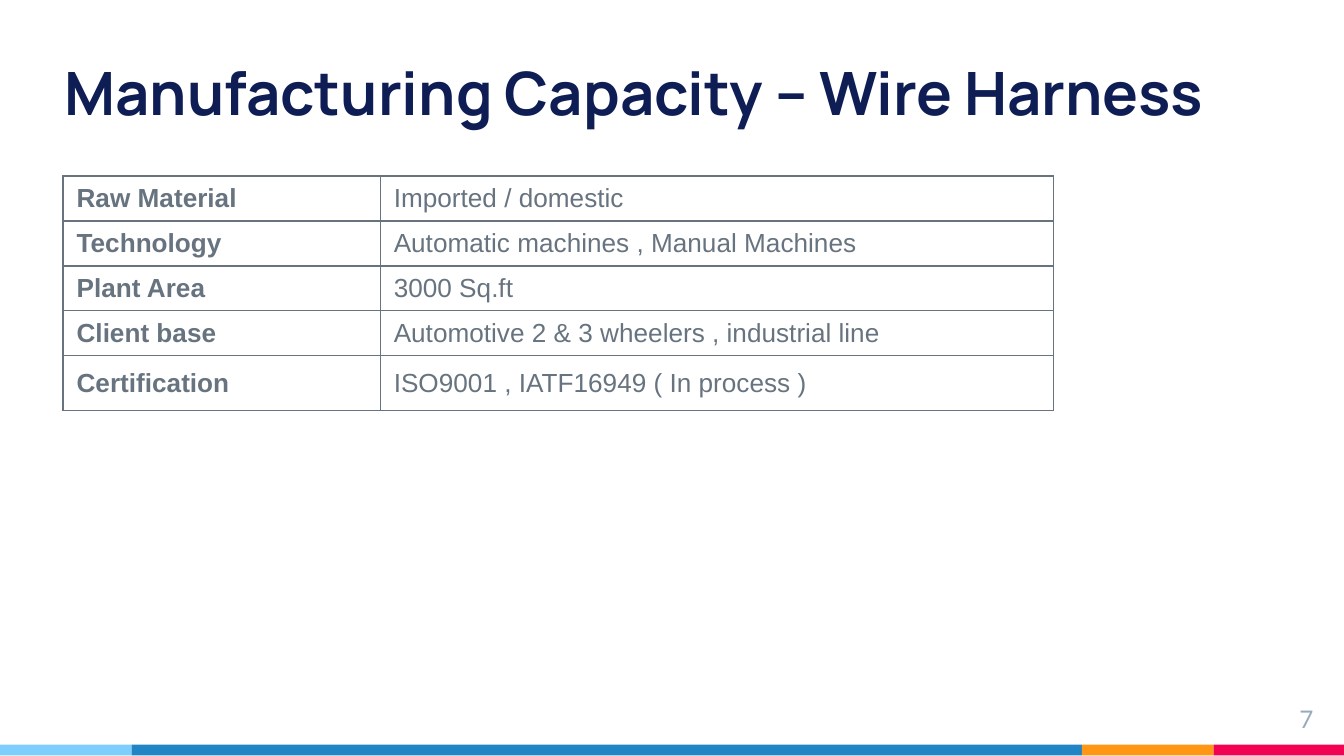
from lxml.etree import SubElement
from pptx import Presentation
from pptx.dml.color import RGBColor
from pptx.enum.shapes import MSO_SHAPE
from pptx.enum.text import MSO_ANCHOR as Anchor, PP_ALIGN as Align
from pptx.oxml.ns import qn
from pptx.util import Inches, Pt

NAVY = RGBColor(0x0E, 0x1D, 0x54)
SLATE = RGBColor(0x67, 0x74, 0x80)
GRAY = RGBColor(0x97, 0xAB, 0xBC)
SKY = RGBColor(0x7E, 0xCE, 0xFD)
BLUE = RGBColor(0x21, 0x85, 0xC5)
ORANGE = RGBColor(0xFF, 0x97, 0x15)
RED = RGBColor(0xF2, 0x02, 0x53)

# Content
TITLE = "Manufacturing Capacity – Wire Harness"
PAGE_NUMBER = "7"
CAPACITY = [
    ("Raw Material", "Imported / domestic"),
    ("Technology", "Automatic machines , Manual Machines"),
    ("Plant Area", "3000 Sq.ft"),
    ("Client base", "Automotive 2 & 3 wheelers , industrial line"),
    ("Certification", "ISO9001 , IATF16949 ( In process )"),
]
COLUMN_WIDTHS = [2.36, 5.01]
ROW_HEIGHTS = [0.33, 0.33, 0.33, 0.33, 0.41]
FOOTER_BANDS = [(0.98, SKY), (7.07, BLUE), (0.98, ORANGE), (0.97, RED)]
FOOTER_TOP, FOOTER_HEIGHT = 5.54, 0.08


def write_text(frame, text, font="Arial", size=14, color=SLATE, bold=False,
               align=Align.LEFT):
    paragraph = frame.paragraphs[0]
    paragraph.alignment = align
    run = paragraph.add_run()
    run.text = text
    run.font.name = font
    run.font.size = Pt(size)
    run.font.bold = bold
    run.font.color.rgb = color


def add_text_box(slide, box, text, anchor=Anchor.TOP, **text_format):
    frame = slide.shapes.add_textbox(*map(Inches, box)).text_frame
    frame.word_wrap = True
    frame.vertical_anchor = anchor
    frame.margin_left = frame.margin_right = Inches(0.1)
    frame.margin_top = frame.margin_bottom = Inches(0.1)
    write_text(frame, text, **text_format)


def set_borders(cell, color, width):
    properties = cell._tc.get_or_add_tcPr()
    for index, side in enumerate(("a:lnL", "a:lnR", "a:lnT", "a:lnB")):
        line = SubElement(properties, qn(side), w=str(Pt(width)))
        fill = SubElement(line, qn("a:solidFill"))
        SubElement(fill, qn("a:srgbClr"), val=str(color))
        # Borders come before the fill in the cell properties
        properties.insert(index, line)


# Widescreen slide, 16:9
presentation = Presentation()
presentation.slide_width = Inches(10)
presentation.slide_height = Inches(10) * 9 // 16
slide = presentation.slides.add_slide(presentation.slide_layouts[6])

# Footer bands, left to right
left = 0
for width, color in FOOTER_BANDS:
    band = slide.shapes.add_shape(
        MSO_SHAPE.RECTANGLE, Inches(left), Inches(FOOTER_TOP),
        Inches(width), Inches(FOOTER_HEIGHT))
    band.shadow.inherit = False
    band.fill.solid()
    band.fill.fore_color.rgb = color
    band.line.fill.background()
    left += width

# Page number and title
add_text_box(slide, (9.27, 5.14, 0.6, 0.34), PAGE_NUMBER,
             font="Lato", size=13, color=GRAY, align=Align.RIGHT)
add_text_box(slide, (0.38, 0.11, 10.1, 0.94), TITLE, anchor=Anchor.BOTTOM,
             font="Manrope", size=32, color=NAVY, bold=True)

# Capacity table
table = slide.shapes.add_table(
    len(CAPACITY), len(COLUMN_WIDTHS), Inches(0.47), Inches(1.31),
    Inches(sum(COLUMN_WIDTHS)), Inches(sum(ROW_HEIGHTS))).table
table.first_row = table.horz_banding = False
for column, width in zip(table.columns, COLUMN_WIDTHS):
    column.width = Inches(width)
for row, height, texts in zip(table.rows, ROW_HEIGHTS, CAPACITY):
    row.height = Inches(height)
    for index, (cell, text) in enumerate(zip(row.cells, texts)):
        cell.fill.background()
        cell.vertical_anchor = Anchor.MIDDLE
        set_borders(cell, SLATE, 1)
        write_text(cell.text_frame, text, bold=index == 0)

presentation.save("out.pptx")
